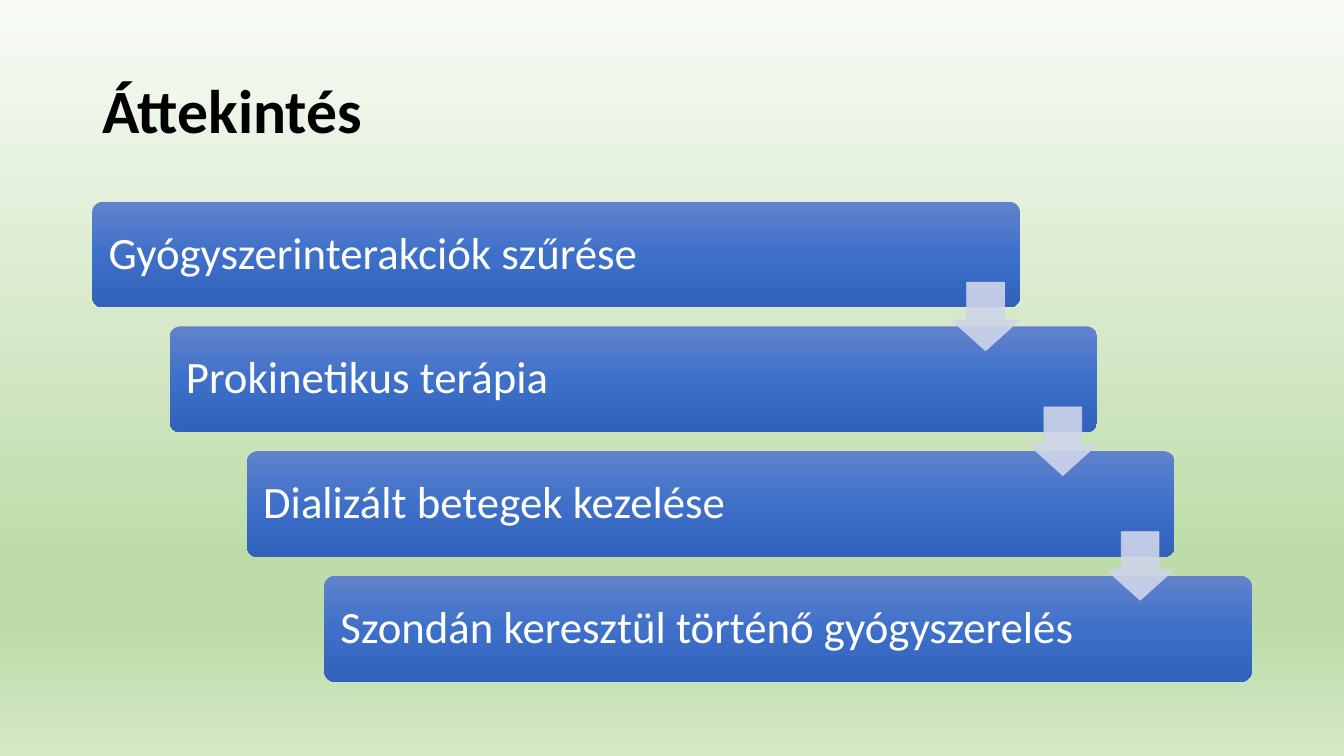
from dataclasses import dataclass

from lxml import etree
from pptx import Presentation
from pptx.dml.color import RGBColor
from pptx.enum.shapes import MSO_SHAPE
from pptx.enum.text import MSO_ANCHOR, PP_ALIGN
from pptx.oxml.ns import qn
from pptx.util import Inches, Pt

ROUNDED = MSO_SHAPE.ROUNDED_RECTANGLE
DOWN_ARROW = MSO_SHAPE.DOWN_ARROW
MIDDLE = MSO_ANCHOR.MIDDLE
LEFT = PP_ALIGN.LEFT

SLIDE_WIDTH = Inches(13.33)
SLIDE_HEIGHT = Inches(7.5)


@dataclass(frozen=True)
class Theme:
    font: str = "Calibri"
    title_size: int = 44
    step_size: int = 32
    title_color: str = "000000"
    step_color: str = "FFFFFF"
    arrow_color: str = "CFD5EA"
    arrow_opacity: int = 90
    backdrop: tuple = ((0, "F8FBF6"), (74, "BEDCAA"), (83, "BEDCAA"), (100, "D4E8C6"))
    bar: tuple = ((0, "6183CB"), (50, "3E70CA"), (100, "3062BB"))


@dataclass(frozen=True)
class Area:
    """Percentages of the slide's width and height."""

    left: float
    top: float
    width: float
    height: float

    def shifted(self, right: float, down: float) -> "Area":
        return Area(self.left + right, self.top + down, self.width, self.height)

    def to_lengths(self) -> tuple:
        return (
            int(SLIDE_WIDTH * self.left / 100),
            int(SLIDE_HEIGHT * self.top / 100),
            int(SLIDE_WIDTH * self.width / 100),
            int(SLIDE_HEIGHT * self.height / 100),
        )


THEME = Theme()
TITLE_AREA = Area(6.88, 5.33, 86.25, 19.33)
FIRST_BAR = Area(6.88, 26.67, 69, 14)
FIRST_ARROW = Area(70.78, 37.33, 5.1, 9.07)
STEP_RIGHT = 5.75
STEP_DOWN = 16.5
STEPS = (
    "Gyógyszerinterakciók szűrése",
    "Prokinetikus terápia",
    "Dializált betegek kezelése",
    "Szondán keresztül történő gyógyszerelés",
)


def apply_gradient(fill, element, stops: tuple) -> None:
    fill.gradient()
    fill.gradient_angle = 270
    stop_list = next(element.iter(qn("a:gsLst")))
    for stop in list(stop_list):
        stop_list.remove(stop)
    for percent, color in stops:
        stop = etree.SubElement(stop_list, qn("a:gs"), pos=str(percent * 1000))
        etree.SubElement(stop, qn("a:srgbClr"), val=color)


def write_text(box, text: str, size: int, color: str, bold: bool = False) -> None:
    frame = box.text_frame
    frame.word_wrap = True
    frame.vertical_anchor = MIDDLE
    para = frame.paragraphs[0]
    para.text = text
    para.alignment = LEFT
    para.line_spacing = 0.9
    para.font.name = THEME.font
    para.font.size = Pt(size)
    para.font.bold = bold
    para.font.color.rgb = RGBColor.from_string(color)


def add_title(page, text: str) -> None:
    box = page.shapes.add_textbox(*TITLE_AREA.to_lengths())
    write_text(box, text, THEME.title_size, THEME.title_color, bold=True)


def add_bar(page, area: Area, text: str) -> None:
    bar = page.shapes.add_shape(ROUNDED, *area.to_lengths())
    bar.adjustments[0] = 0.1
    bar.shadow.inherit = False
    bar.line.fill.background()
    apply_gradient(bar.fill, bar.element, THEME.bar)
    frame = bar.text_frame
    frame.margin_left = frame.margin_right = Inches(0.13)
    frame.margin_top = frame.margin_bottom = Inches(0.13)
    write_text(bar, text, THEME.step_size, THEME.step_color)


def add_arrow(page, area: Area) -> None:
    arrow = page.shapes.add_shape(DOWN_ARROW, *area.to_lengths())
    arrow.adjustments[0] = 0.55
    arrow.adjustments[1] = 0.45
    arrow.shadow.inherit = False
    arrow.fill.solid()
    arrow.line.width = Pt(0.5)
    for color_format in (arrow.fill.fore_color, arrow.line.color):
        color_format.rgb = RGBColor.from_string(THEME.arrow_color)
    for color in arrow.element.iter(qn("a:srgbClr")):
        etree.SubElement(color, qn("a:alpha"), val=str(THEME.arrow_opacity * 1000))


def main() -> None:
    deck = Presentation()
    deck.slide_width = SLIDE_WIDTH
    deck.slide_height = SLIDE_HEIGHT
    page = deck.slides.add_slide(deck.slide_layouts[6])
    apply_gradient(page.background.fill, page.element, THEME.backdrop)
    add_title(page, "Áttekintés")
    for index, text in enumerate(STEPS):
        add_bar(page, FIRST_BAR.shifted(index * STEP_RIGHT, index * STEP_DOWN), text)
    for index in range(len(STEPS) - 1):
        add_arrow(page, FIRST_ARROW.shifted(index * STEP_RIGHT, index * STEP_DOWN))
    deck.save("out.pptx")


if __name__ == "__main__":
    main()
